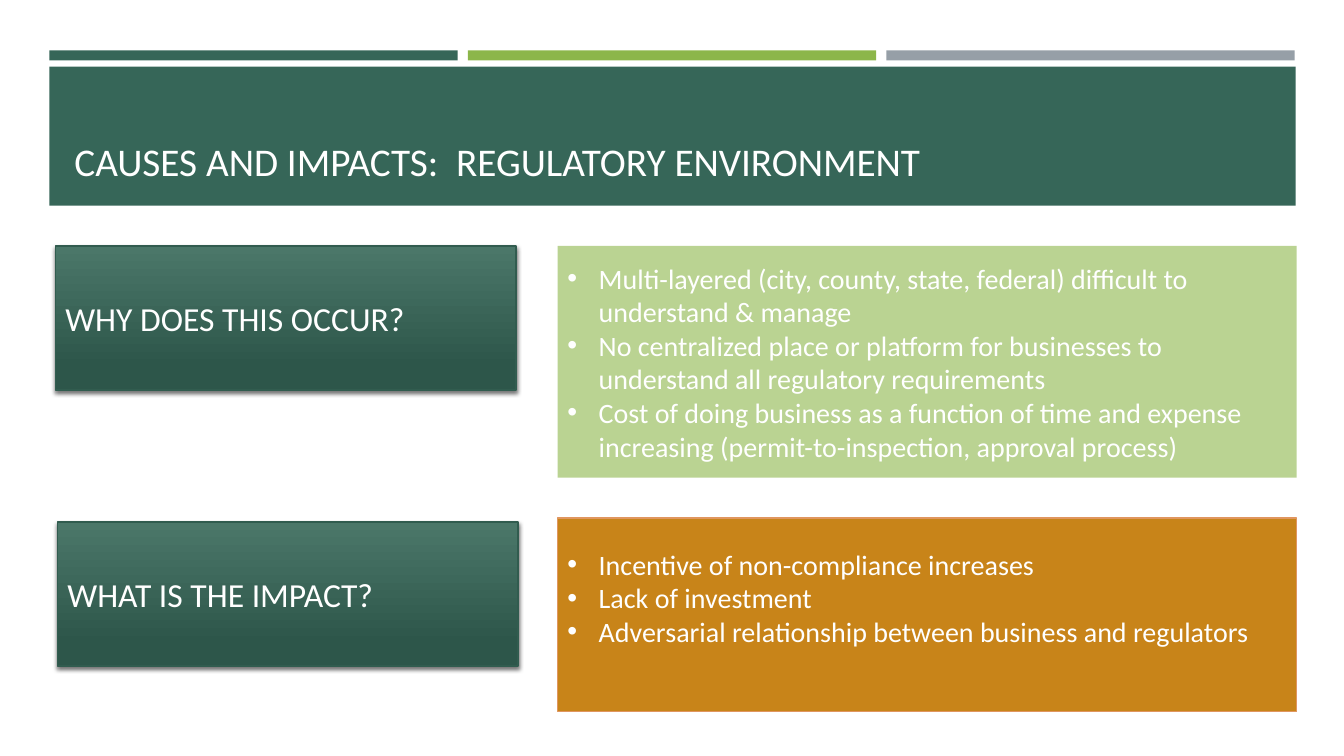
from dataclasses import dataclass
from typing import Optional

from lxml import etree
from pptx import Presentation
from pptx import util as u
from pptx.dml.color import RGBColor
from pptx.enum import shapes, text
from pptx.oxml import ns

PX = 9144
FONT = "Calibri"
WHITE = RGBColor(0xFF, 0xFF, 0xFF)
GREEN = RGBColor(0x36, 0x66, 0x58)
LIME = RGBColor(0x8C, 0xB6, 0x4A)
GREY = RGBColor(0x96, 0x9F, 0xA7)
PALE = RGBColor(0xBA, 0xD3, 0x92)
AMBER = RGBColor(0xC8, 0x84, 0x19)
PEACH = RGBColor(0xE0, 0x96, 0x5F)
LIGHT = RGBColor(0x4B, 0x77, 0x69)
DARK = RGBColor(0x2D, 0x56, 0x4A)
EDGE = RGBColor(0x31, 0x5C, 0x4F)


@dataclass
class Box:
    left: int
    top: int
    width: int
    height: int
    fill: Optional[RGBColor] = None
    line: Optional[RGBColor] = None

    def emu(self) -> list[int]:
        return [n * PX for n in (self.left, self.top, self.width, self.height)]


@dataclass
class Topic:
    label: Box
    title: str
    panel: Box
    points: list[str]
    foot: int = 5


BARS = [
    Box(49 + 415 * i, 50, 405, 10, tone)
    for i, tone in enumerate((GREEN, LIME, GREY))
]
BAND = Box(49, 66, 1236, 138, GREEN)
HEAD = Box(64, 80, 1206, 108)
TOPICS = [
    Topic(
        Box(55, 244, 457, 143, line=EDGE),
        "WHY DOES THIS OCCUR?",
        Box(553, 244, 733, 230, PALE),
        [
            "Multi-layered (city, county, state, federal) difficult to understand & manage",
            "No centralized place or platform for businesses to understand all regulatory requirements",
            "Cost of doing business as a function of time and expense increasing (permit-to-inspection, approval process)",
        ],
    ),
    Topic(
        Box(57, 518, 457, 143, line=EDGE),
        "WHAT IS THE IMPACT?",
        Box(553, 514, 733, 192, AMBER, PEACH),
        [
            "Incentive of non-compliance increases",
            "Lack of investment",
            "Adversarial relationship between business and regulators",
        ],
        foot=39,
    ),
]


def draw(slide, box: Box):
    shape = slide.shapes.add_shape(shapes.MSO_SHAPE.RECTANGLE, *box.emu())
    shape.shadow.inherit = False
    if box.fill is not None:
        shape.fill.solid()
        shape.fill.fore_color.rgb = box.fill
    if box.line is None:
        shape.line.fill.background()
    else:
        shape.line.color.rgb = box.line
        shape.line.width = u.Pt(1)
    return shape


def shade(shape) -> None:
    shape.fill.gradient()
    shape.fill.gradient_angle = 270
    for stop, spot, tone in zip(shape.fill.gradient_stops, (0, 0.84), (LIGHT, DARK)):
        stop.position = spot
        stop.color.rgb = tone
    glow = etree.SubElement(
        shape._element.spPr.find(ns.qn("a:effectLst")),
        ns.qn("a:outerShdw"),
        blurRad=str(u.Pt(3)),
        dist=str(u.Pt(2)),
        dir="5400000",
        algn="ctr",
        rotWithShape="0",
    )
    tone = etree.SubElement(glow, ns.qn("a:srgbClr"), val="000000")
    etree.SubElement(tone, ns.qn("a:alpha"), val="55000")


def write(
    shape,
    lines: list[str],
    *,
    size: int,
    anchor=text.MSO_ANCHOR.MIDDLE,
    dots: bool = False,
    foot: int = 5,
) -> None:
    frame = shape.text_frame
    frame.word_wrap = True
    frame.vertical_anchor = anchor
    frame.margin_bottom = foot * PX
    frame.text = "\n".join(lines)
    for para in frame.paragraphs:
        para.alignment = text.PP_ALIGN.LEFT
        font = para.runs[0].font
        font.name = FONT
        font.size = u.Pt(size)
        font.color.rgb = WHITE
        if dots:
            props = para._p.get_or_add_pPr()
            props.set("marL", str(31 * PX))
            props.set("indent", str(-31 * PX))
            etree.SubElement(props, ns.qn("a:buFont"), typeface="Arial")
            etree.SubElement(props, ns.qn("a:buChar"), char="•")


def main() -> None:
    deck = Presentation()
    deck.slide_width = 1333 * PX
    deck.slide_height = 750 * PX
    slide = deck.slides.add_slide(deck.slide_layouts[6])
    for box in [*BARS, BAND]:
        draw(slide, box)
    write(
        slide.shapes.add_textbox(*HEAD.emu()),
        ["CAUSES AND IMPACTS:  REGULATORY ENVIRONMENT"],
        size=28,
        anchor=text.MSO_ANCHOR.BOTTOM,
    )
    for topic in TOPICS:
        label = draw(slide, topic.label)
        shade(label)
        write(label, [topic.title], size=24)
        panel = draw(slide, topic.panel)
        write(panel, topic.points, size=20, dots=True, foot=topic.foot)
    deck.save("out.pptx")


if __name__ == "__main__":
    main()
